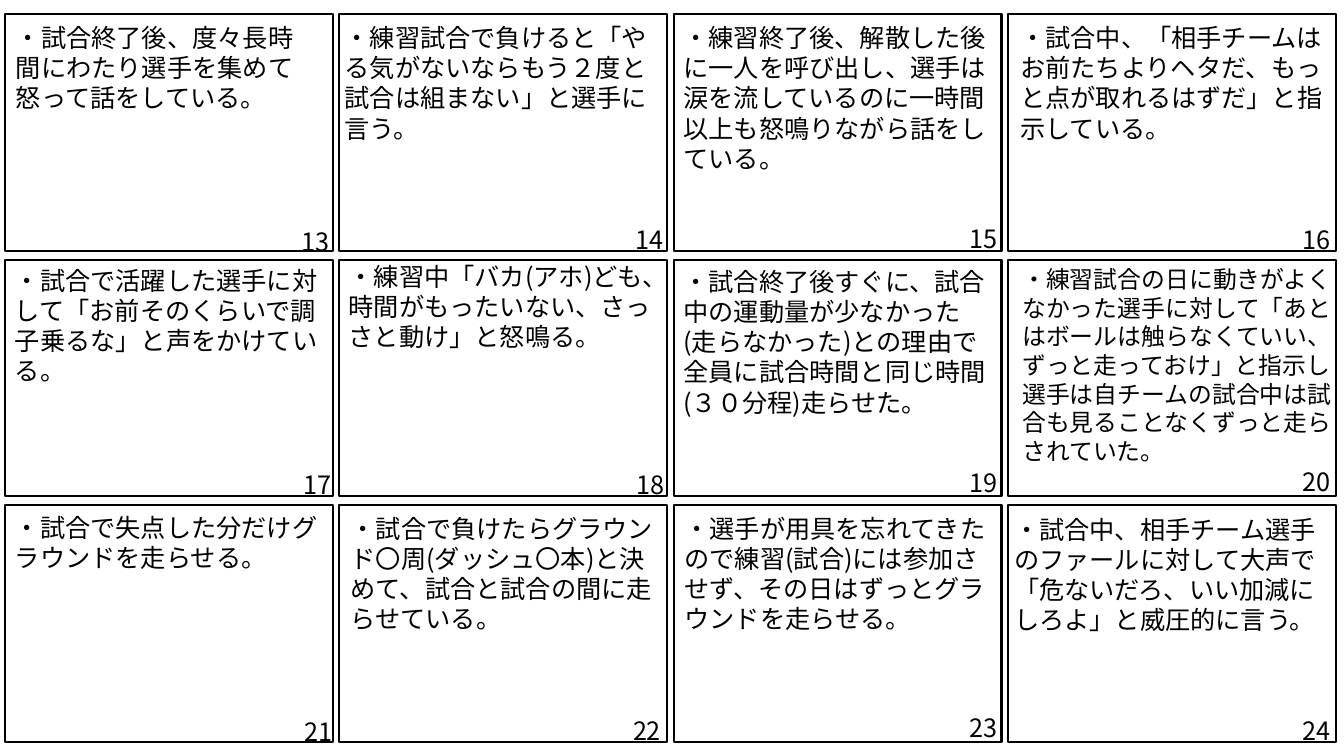
import pptx
import pptx.util
import pptx.dml.color
import pptx.enum.lang
import pptx.enum.shapes
import pptx.enum.text
import pptx.oxml.ns
import lxml.etree

Inches = pptx.util.Inches

# Content: number, text, text box (left, top, width, height), number box (left, top)
CARDS = [
    (13, "・試合終了後、度々長時間にわたり選手を集めて怒って話をしている。",
     (0.06, 0.17, 3.19, 1.01), (2.89, 2.2)),
    (14, "・練習試合で負けると「やる気がないならもう２度と試合は組まない」と選手に言う。",
     (3.32, 0.17, 3.25, 1.31), (6.2, 2.18)),
    (15, "・練習終了後、解散した後に一人を呼び出し、選手は涙を流しているのに一時間以上も怒鳴りながら話をしている。",
     (6.68, 0.17, 3.28, 1.62), (9.52, 2.17)),
    (16, "・試合中、「相手チームはお前たちよりヘタだ、もっと点が取れるはずだ」と指示している。",
     (10.02, 0.17, 3.22, 1.31), (12.82, 2.18)),
    (17, "・試合で活躍した選手に対して「お前そのくらいで調子乗るな」と声をかけている。",
     (0.05, 2.58, 3.23, 1.31), (2.91, 4.61)),
    (18, "・練習中「バカ(アホ)ども、時間がもったいない、さっさと動け」と怒鳴る。",
     (3.36, 2.54, 3.2, 1.01), (6.21, 4.61)),
    (19, "・試合終了後すぐに、試合中の運動量が少なかった(走らなかった)との理由で全員に試合時間と同じ時間(３０分程)走らせた。",
     (6.68, 2.59, 3.28, 1.62), (9.52, 4.59)),
    (20, "・練習試合の日に動きがよくなかった選手に対して「あとはボールは触らなくていい、ずっと走っておけ」と指示し選手は自チームの試合中は試合も見ることなくずっと走らされていた。",
     (10.04, 2.58, 3.28, 2.1), (12.82, 4.58)),
    (21, "・試合で失点した分だけグラウンドを走らせる。",
     (0.05, 5.03, 3.2, 0.71), (2.92, 7.06)),
    (22, "・試合で負けたらグラウンド〇周(ダッシュ〇本)と決めて、試合と試合の間に走らせている。",
     (3.38, 5.04, 3.24, 1.31), (6.18, 7.05)),
    (23, "・選手が用具を忘れてきたので練習(試合)には参加させず、その日はずっとグラウンドを走らせる。",
     (6.69, 5.04, 3.28, 1.62), (9.52, 7.02)),
    (24, "・試合中、相手チーム選手のファールに対して大声で「危ないだろ、いい加減にしろよ」と威圧的に言う。",
     (9.96, 5.05, 3.25, 1.31), (12.82, 7.05)),
]
SMALL_TEXT = {20: 17}  # the longest card is set smaller
COLORS = {"ink": "000000"}
FONT = "Noto Sans CJK JP"

# Card grid
COLUMNS = 4
LEFT, TOP = 0.05, 0.14
PITCH_X, PITCH_Y = (10 - LEFT) / 3, (5.01 - TOP) / 2
CARD_W, CARD_H = 3.25, 2.35
NUMBER_W, NUMBER_H = 0.52, 0.4


def rgb(name):
    return pptx.dml.color.RGBColor.from_string(COLORS[name])


def add_text(s, text, *, box, size=18, color="ink"):
    sp = s.shapes.add_textbox(*map(Inches, box))
    tf = sp.text_frame
    tf.word_wrap = True
    tf.auto_size = pptx.enum.text.MSO_AUTO_SIZE.SHAPE_TO_FIT_TEXT
    r = tf.paragraphs[0].add_run()
    r.text = text
    r.font.size = pptx.util.Pt(size)
    r.font.color.rgb = rgb(color)
    r.font.language_id = pptx.enum.lang.MSO_LANGUAGE_ID.JAPANESE
    r.font.name = FONT
    # East Asian typeface
    ea = lxml.etree.SubElement(r._r.get_or_add_rPr(), pptx.oxml.ns.qn("a:ea"))
    ea.set("typeface", FONT)


def add_card(s, index):
    row, col = divmod(index, COLUMNS)
    box = (LEFT + col * PITCH_X, TOP + row * PITCH_Y, CARD_W, CARD_H)
    sp = s.shapes.add_shape(pptx.enum.shapes.MSO_SHAPE.RECTANGLE, *map(Inches, box))
    sp.shadow.inherit = False
    sp.fill.background()
    sp.line.color.rgb = rgb("ink")
    sp.line.width = pptx.util.Pt(1.5)


def main():
    prs = pptx.Presentation()
    prs.slide_width, prs.slide_height = Inches(13.33), Inches(7.5)
    s = prs.slides.add_slide(prs.slide_layouts[6])

    # Card frames
    for index in range(len(CARDS)):
        add_card(s, index)

    # Card texts and numbers
    for number, text, box, corner in CARDS:
        add_text(s, text, box=box, size=SMALL_TEXT.get(number, 18))
        add_text(s, str(number), box=(*corner, NUMBER_W, NUMBER_H))

    prs.save("out.pptx")


if __name__ == "__main__":
    main()
